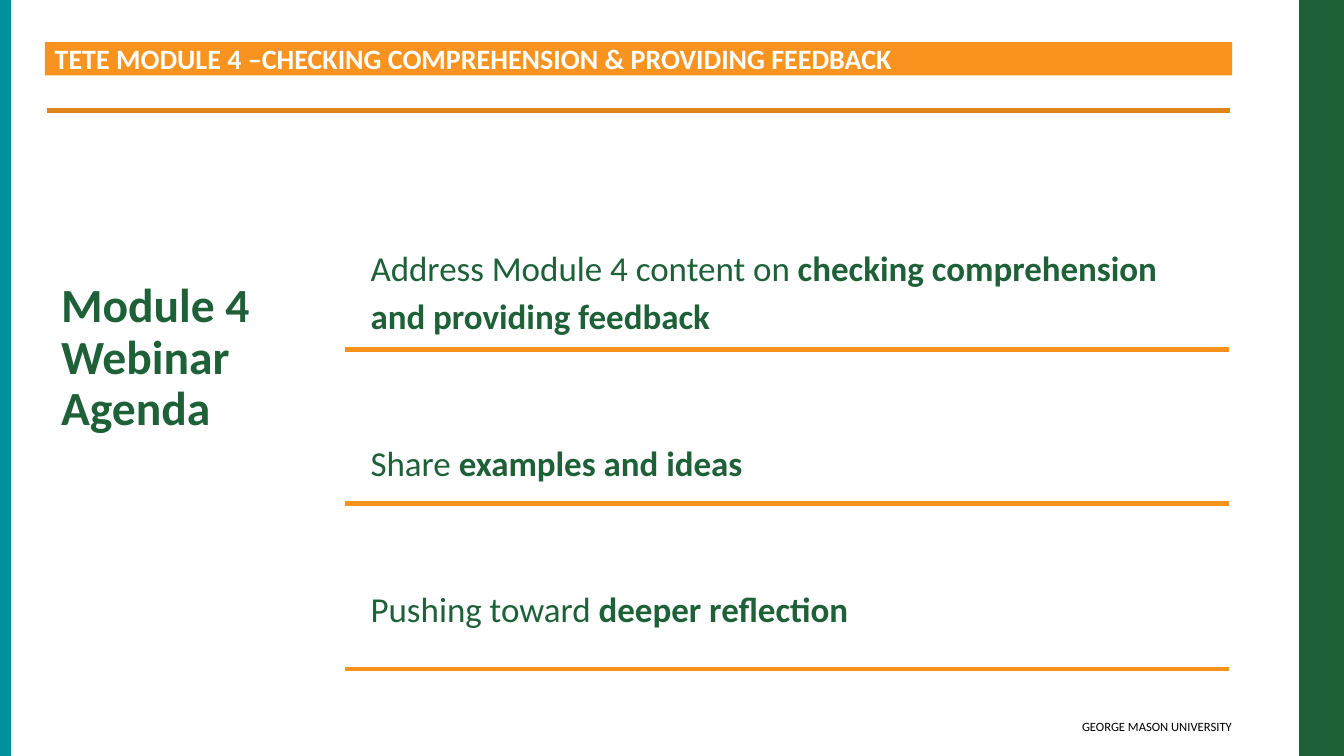
import pptx
import pptx.util
import pptx.dml.color
import pptx.enum.shapes
import pptx.enum.text
import pptx.oxml.ns
import lxml.etree

Cm = pptx.util.Cm
Pt = pptx.util.Pt
ALIGN = pptx.enum.text.PP_ALIGN
ANCHOR = pptx.enum.text.MSO_ANCHOR


class Deck:
    font = "Calibri"
    hues = {
        "green": "1E6138",
        "teal": "00909E",
        "orange": "F7931E",
        "amber": "F7931B",
        "rust": "DF8418",
        "white": "FFFFFF",
        "black": "000000",
    }

    def __init__(self, wide, high):
        self.prs = pptx.Presentation()
        self.prs.slide_width = Cm(wide)
        self.prs.slide_height = Cm(high)
        self.slide = self.prs.slides.add_slide(self.prs.slide_layouts[6])

    def hue(self, name):
        return pptx.dml.color.RGBColor.from_string(self.hues[name])

    def bar(self, x, y, w, h, hue):
        kind = pptx.enum.shapes.MSO_SHAPE.RECTANGLE
        shape = self.slide.shapes.add_shape(kind, Cm(x), Cm(y), Cm(w), Cm(h))
        shape.shadow.inherit = False
        shape.fill.solid()
        shape.fill.fore_color.rgb = self.hue(hue)
        shape.line.fill.background()
        return shape

    def rule(self, x, y, end, hue):
        kind = pptx.enum.shapes.MSO_CONNECTOR.STRAIGHT
        line = self.slide.shapes.add_connector(kind, Cm(x), Cm(y), Cm(end), Cm(y))
        line.line.color.rgb = self.hue(hue)
        line.line.width = Pt(3.35)
        props = line._element.spPr
        lxml.etree.SubElement(props, pptx.oxml.ns.qn("a:effectLst"))

    def box(self, x, y, w, h):
        return self.slide.shapes.add_textbox(Cm(x), Cm(y), Cm(w), Cm(h))

    def label(self, shape, rows, size, hue, pads, lead=1.0, gap=0,
              align=ALIGN.LEFT, anchor=ANCHOR.TOP):
        frame = shape.text_frame
        frame.word_wrap = True
        frame.vertical_anchor = anchor
        left, top, right, base = pads
        frame.margin_left, frame.margin_top = Cm(left), Cm(top)
        frame.margin_right, frame.margin_bottom = Cm(right), Cm(base)
        for i, (plain, bold) in enumerate(rows):
            para = frame.add_paragraph() if i else frame.paragraphs[0]
            para.alignment = align
            para.line_spacing = lead
            if i and gap:
                para.space_before = Pt(gap)
            for text, heavy in ((plain, False), (bold, True)):
                if text:
                    run = para.add_run()
                    run.text = text
                    run.font.name = self.font
                    run.font.size = Pt(size)
                    run.font.bold = heavy
                    run.font.color.rgb = self.hue(hue)


def main():
    deck = Deck(33.87, 19.05)
    deck.bar(32.74, 0, 1.13, 19.05, "green")
    deck.bar(0, 0, 0.28, 19.05, "teal")

    foot = deck.box(17.22, 17.98, 13.82, 0.84)
    deck.label(foot, [("GEORGE MASON UNIVERSITY", "")], 9, "black",
               (0.25, 0.13, 0, 0.13), align=ALIGN.RIGHT)

    head = deck.bar(1.13, 1.06, 29.92, 0.84, "orange")
    title = "TETE MODULE 4 –CHECKING COMPREHENSION & PROVIDING FEEDBACK"
    deck.label(head, [("", title)], 20, "white", (0.25, 0, 0.25, 0),
               anchor=ANCHOR.MIDDLE)

    deck.rule(1.18, 2.79, 30.99, "rust")
    for y in (8.81, 12.68, 16.86):
        deck.rule(8.69, y, 30.98, "amber")

    topic = deck.box(1.18, 6.74, 7.49, 4.7)
    deck.label(topic, [("", "Module 4"), ("", "Webinar Agenda")], 34, "green",
               (0.36,) * 4, lead=0.9)

    goals = [
        ("Address Module 4 content on ",
         "checking comprehension and providing feedback"),
        ("Share ", "examples and ideas"),
        ("Pushing toward ", "deeper reflection"),
    ]
    plan = deck.box(9.09, 5.81, 21.87, 10.2)
    deck.label(plan, goals, 25, "green", (0.25,) * 4, lead=1.15, gap=70)

    deck.prs.save("out.pptx")


if __name__ == "__main__":
    main()
